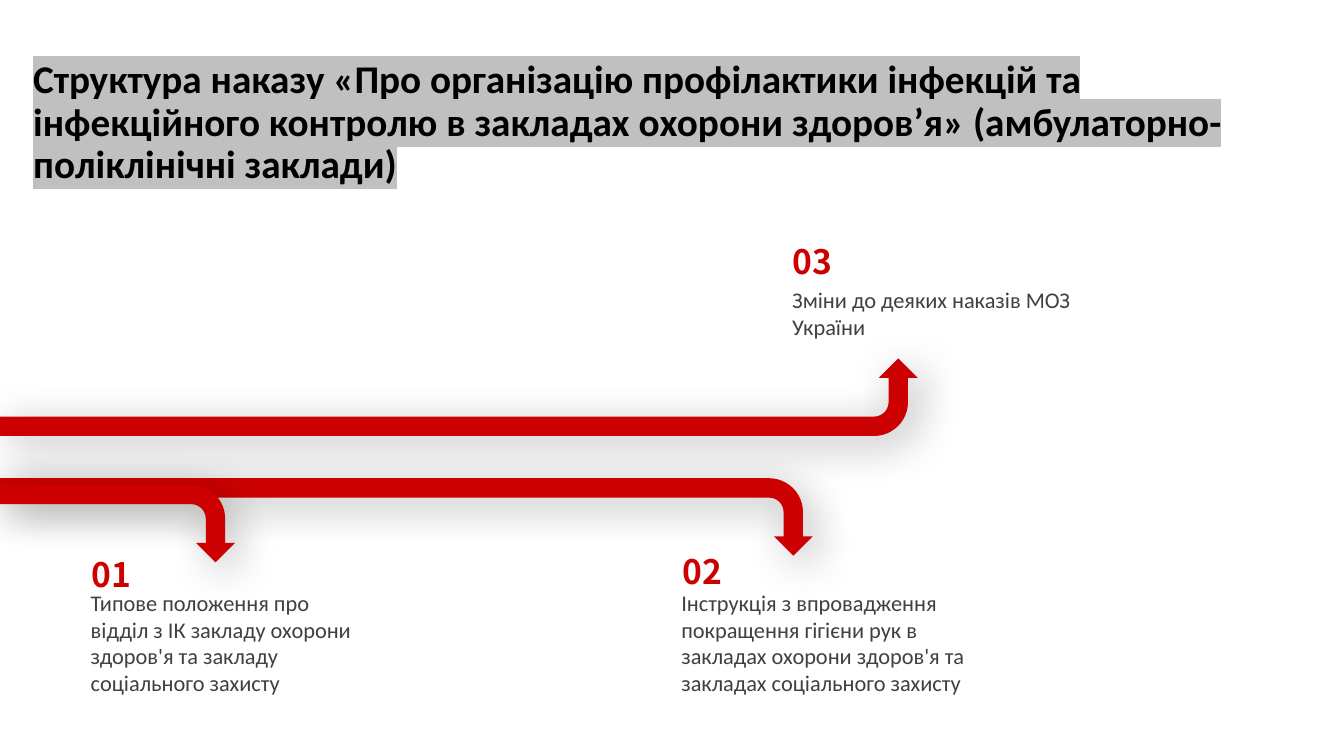
from dataclasses import dataclass

from lxml import etree
from pptx import Presentation
from pptx.dml.color import RGBColor as RGB
from pptx.enum.shapes import MSO_SHAPE as SHAPE
from pptx.enum.text import MSO_ANCHOR as ANCHOR, MSO_AUTO_SIZE as AUTO
from pptx.oxml import parse_xml
from pptx.oxml.ns import nsdecls, qn
from pptx.util import Pt


@dataclass(frozen=True)
class Theme:
    red: str = "CC0000"
    grey: str = "404040"
    black: str = "000000"
    marker: str = "C0C0C0"
    text_font: str = "Calibri"
    number_font: str = "Noto Sans CJK SC"
    title_size: int = 28
    number_size: int = 24
    body_size: int = 16
    arrow_depth: float = 55.4


T = Theme()

# number, number box (left, top, width), text box (left, top, width, height), text
ITEMS = [
    ("01", (60.5, 392.4, 108), (59.8, 417.6, 206, 82.8),
     "Типове положення про відділ з ІК закладу охорони здоров'я та закладу "
     "соціального захисту"),
    ("02", (482.4, 390.2, 101.5), (481.7, 417.6, 222.5, 82.8),
     "Інструкція з впровадження покращення гігієни рук в закладах охорони "
     "здоров'я та закладах соціального захисту"),
    ("03", (560.9, 169.2, 101.5), (560.9, 201.6, 239, 43.9),
     "Зміни до деяких наказів МОЗ України"),
]


def add_text(slide, text, box, size, color, font, bold=False, inset=(5, 3)):
    tb = slide.shapes.add_textbox(*map(Pt, box))
    tf = tb.text_frame
    tf.word_wrap = True
    tf.margin_left = tf.margin_right = Pt(inset[0])
    tf.margin_top = tf.margin_bottom = Pt(inset[1])
    tf.text = text
    f = tf.paragraphs[0].runs[0].font
    f.size, f.bold, f.name = Pt(size), bold, font
    f.color.rgb = RGB.from_string(color)
    return tf


def add_title(slide, text):
    tf = add_text(slide, text, (16.6, 39.6, 910.8, 97.2), T.title_size,
                  T.black, T.text_font, True, (7.2, 3.6))
    tf.vertical_anchor = ANCHOR.MIDDLE
    p = tf.paragraphs[0]
    p.line_spacing = 0.9
    fill = p.runs[0]._r.rPr.find(qn("a:solidFill"))
    fill.addnext(parse_xml(
        f'<a:highlight {nsdecls("a")}><a:srgbClr val="{T.marker}"/></a:highlight>'))


def add_shadow(shape):
    shape.shadow.inherit = False
    effects = shape._element.spPr.find(qn("a:effectLst"))
    shadow = etree.SubElement(effects, qn("a:outerShdw"), blurRad=str(Pt(30)),
                              dist=str(Pt(8)), dir="2700000", algn="tl",
                              rotWithShape="0")
    color = etree.SubElement(shadow, qn("a:srgbClr"), val=T.black)
    etree.SubElement(color, qn("a:alpha"), val="30000")


def add_bent_arrow(slide, top, length, up=False):
    """Runs from the left slide edge, then turns up or down at its right end."""
    depth = T.arrow_depth
    s = slide.shapes.add_shape(SHAPE.BENT_ARROW, Pt((length - depth) / 2),
                               Pt(top + (depth - length) / 2),
                               Pt(depth), Pt(length))
    s.rotation = 90 if up else 270
    xfrm = s._element.spPr.find(qn("a:xfrm"))
    xfrm.set("flipH", "1")
    if not up:
        xfrm.set("flipV", "1")
    s.fill.solid()
    s.fill.fore_color.rgb = RGB.from_string(T.red)
    s.line.fill.background()
    add_shadow(s)


def add_item(slide, number, number_box, text_box, text):
    for tf in (
        add_text(slide, number, (*number_box, 34.6), T.number_size, T.red,
                 T.number_font, True),
        add_text(slide, text, text_box, T.body_size, T.grey, T.text_font),
    ):
        tf.auto_size = AUTO.SHAPE_TO_FIT_TEXT


def main():
    prs = Presentation()
    prs.slide_width, prs.slide_height = Pt(960), Pt(540)
    slide = prs.slides.add_slide(prs.slide_layouts[6])

    add_title(slide, "Структура наказу «Про організацію профілактики інфекцій та "
                     "інфекційного контролю в закладах охорони здоров’я» "
                     "(амбулаторно-поліклінічні заклади)")
    add_bent_arrow(slide, 256, 655.5, up=True)
    add_bent_arrow(slide, 341.6, 580.5)
    for item in ITEMS:
        add_item(slide, *item)
    add_bent_arrow(slide, 346.3, 167.8)

    prs.save("out.pptx")


if __name__ == "__main__":
    main()
